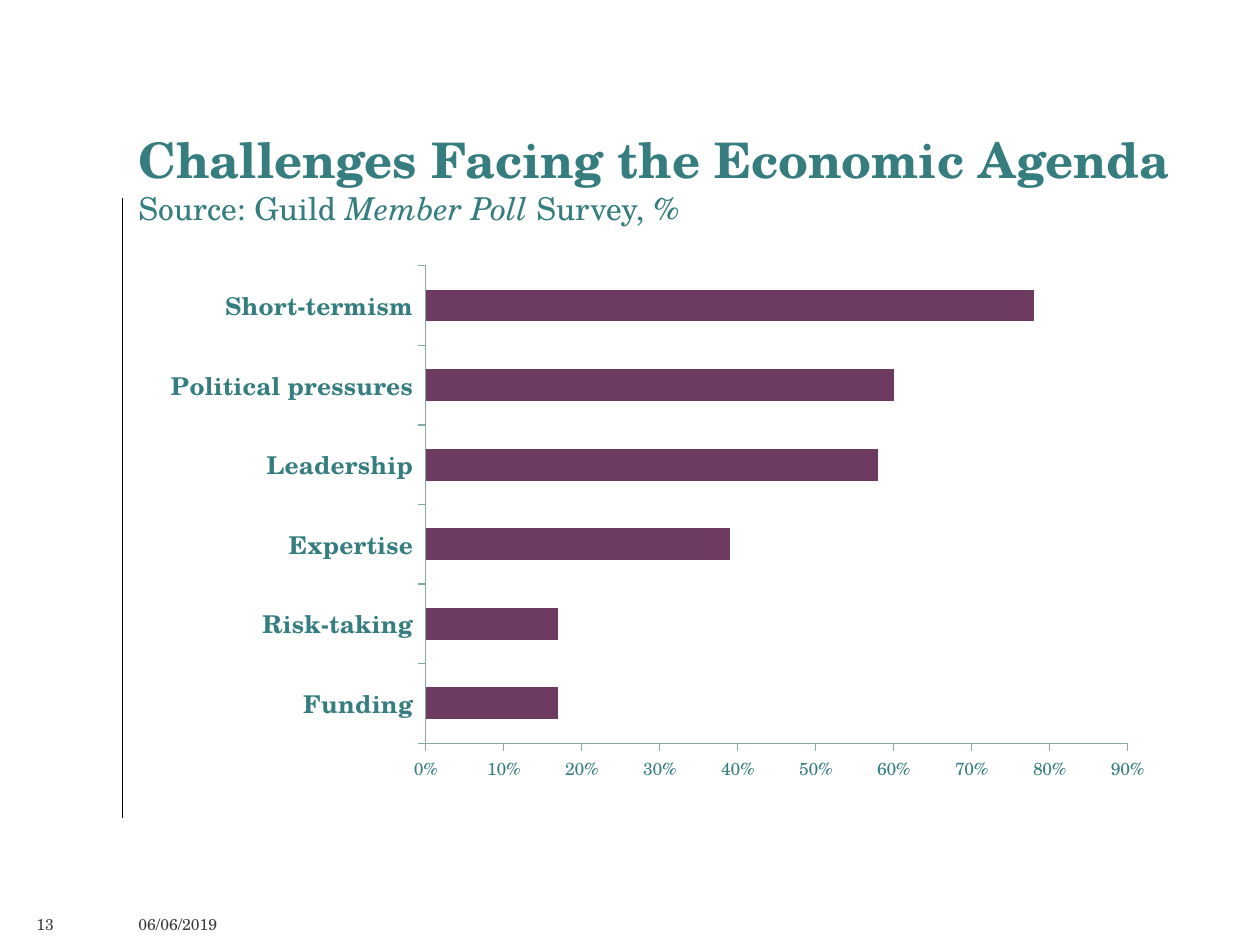
from lxml import etree
from pptx import Presentation
from pptx import util as u
from pptx.chart.data import CategoryChartData
from pptx.dml.color import RGBColor
from pptx.enum import chart as c, shapes, text
from pptx.oxml import parse_xml
from pptx.oxml.ns import nsdecls, qn

FONT = "TeX Gyre Schola"
TEAL, PLUM, GREY, AXIS = "357D7F", "6D3B60", "3C3C3B", "86A9A9"
CHALLENGES = {
    "Funding": 0.17,
    "Risk-taking": 0.17,
    "Expertise": 0.39,
    "Leadership": 0.58,
    "Political pressures": 0.6,
    "Short-termism": 0.78,
}


def color(value):
    return RGBColor.from_string(value)


def set_font(font, size, value, bold=False):
    font.name = FONT
    font.size = u.Pt(size)
    font.bold = bold
    font.color.rgb = color(value)


def add_text_box(slide, left, top, width, height, anchor):
    box = slide.shapes.add_textbox(*map(u.Inches, (left, top, width, height)))
    frame = box.text_frame
    frame.word_wrap = True
    frame.vertical_anchor = anchor
    return frame


def add_footer(slide, left, width, wording):
    frame = add_text_box(slide, left, 7.21, width, 0.25, text.MSO_ANCHOR.BOTTOM)
    paragraph = frame.paragraphs[0]
    paragraph.text = wording
    set_font(paragraph.font, 9, GREY)


def add_heading(slide):
    frame = add_text_box(slide, 1, 0.98, 8.81, 0.88, text.MSO_ANCHOR.TOP)
    title = frame.paragraphs[0]
    title.text = "Challenges Facing the Economic Agenda"
    set_font(title.font, 28, TEAL, bold=True)
    source = frame.add_paragraph()
    for wording, italic in (("Source: Guild ", False), ("Member Poll ", True), ("Survey, %", False)):
        run = source.add_run()
        run.text = wording
        run.font.italic = italic
    set_font(source.font, 18, TEAL)


def add_margin_rule(slide):
    ends = map(u.Inches, (0.97, 1.57, 0.97, 6.49))
    rule = slide.shapes.add_connector(shapes.MSO_CONNECTOR.STRAIGHT, *ends)
    rule.line.color.rgb = color("000000")
    rule.line.width = u.Pt(0.1)
    etree.SubElement(rule._element.spPr, qn("a:effectLst"))


def style_axis(axis, size, bold):
    axis.has_major_gridlines = False
    axis.major_tick_mark = c.XL_TICK_MARK.OUTSIDE
    axis.minor_tick_mark = c.XL_TICK_MARK.NONE
    axis.format.line.color.rgb = color(AXIS)
    axis.format.line.width = u.Pt(0.75)
    set_font(axis.tick_labels.font, size, TEAL, bold)


def place_plot(chart, left, top, width, height):
    plot_area = chart._chartSpace.chart.plotArea
    for layout in plot_area.findall(qn("c:layout")):
        plot_area.remove(layout)
    x, y, w, h = (left / 8.05, top / 4.25, width / 8.05, height / 4.25)
    plot_area.insert(0, parse_xml(
        f'<c:layout {nsdecls("c")}><c:manualLayout><c:layoutTarget val="inner"/>'
        f'<c:xMode val="edge"/><c:yMode val="edge"/><c:x val="{x}"/><c:y val="{y}"/>'
        f'<c:w val="{w}"/><c:h val="{h}"/></c:manualLayout></c:layout>'))


def add_challenge_chart(slide):
    data = CategoryChartData(number_format="0%")
    data.categories = list(CHALLENGES)
    data.add_series("Series 1", list(CHALLENGES.values()))
    area = map(u.Inches, (1.19, 2.03, 8.05, 4.25))
    chart = slide.shapes.add_chart(c.XL_CHART_TYPE.BAR_CLUSTERED, *area, data).chart
    chart.has_legend = False
    chart.has_title = False
    set_font(chart.font, 10, TEAL)
    style_axis(chart.category_axis, 14, True)
    style_axis(chart.value_axis, 10, False)
    chart.value_axis.minimum_scale = 0
    chart.value_axis.maximum_scale = 0.9
    chart.value_axis.major_unit = 0.1
    chart.value_axis.tick_labels.number_format = "0%"
    chart.value_axis.tick_labels.number_format_is_linked = False
    plot = chart.plots[0]
    plot.gap_width = 150
    plot.vary_by_categories = False
    bars = plot.series[0].format.fill
    bars.solid()
    bars.fore_color.rgb = color(PLUM)
    place_plot(chart, 2.19, 0.08, 5.57, 3.79)


def main():
    presentation = Presentation()
    presentation.slide_width = u.Inches(10)
    presentation.slide_height = u.Inches(7.5)
    slide = presentation.slides.add_slide(presentation.slide_layouts[6])
    add_margin_rule(slide)
    add_footer(slide, 1, 1.71, "06/06/2019")
    add_footer(slide, 0.19, 0.79, "13")
    add_heading(slide)
    add_challenge_chart(slide)
    presentation.save("out.pptx")


if __name__ == "__main__":
    main()
